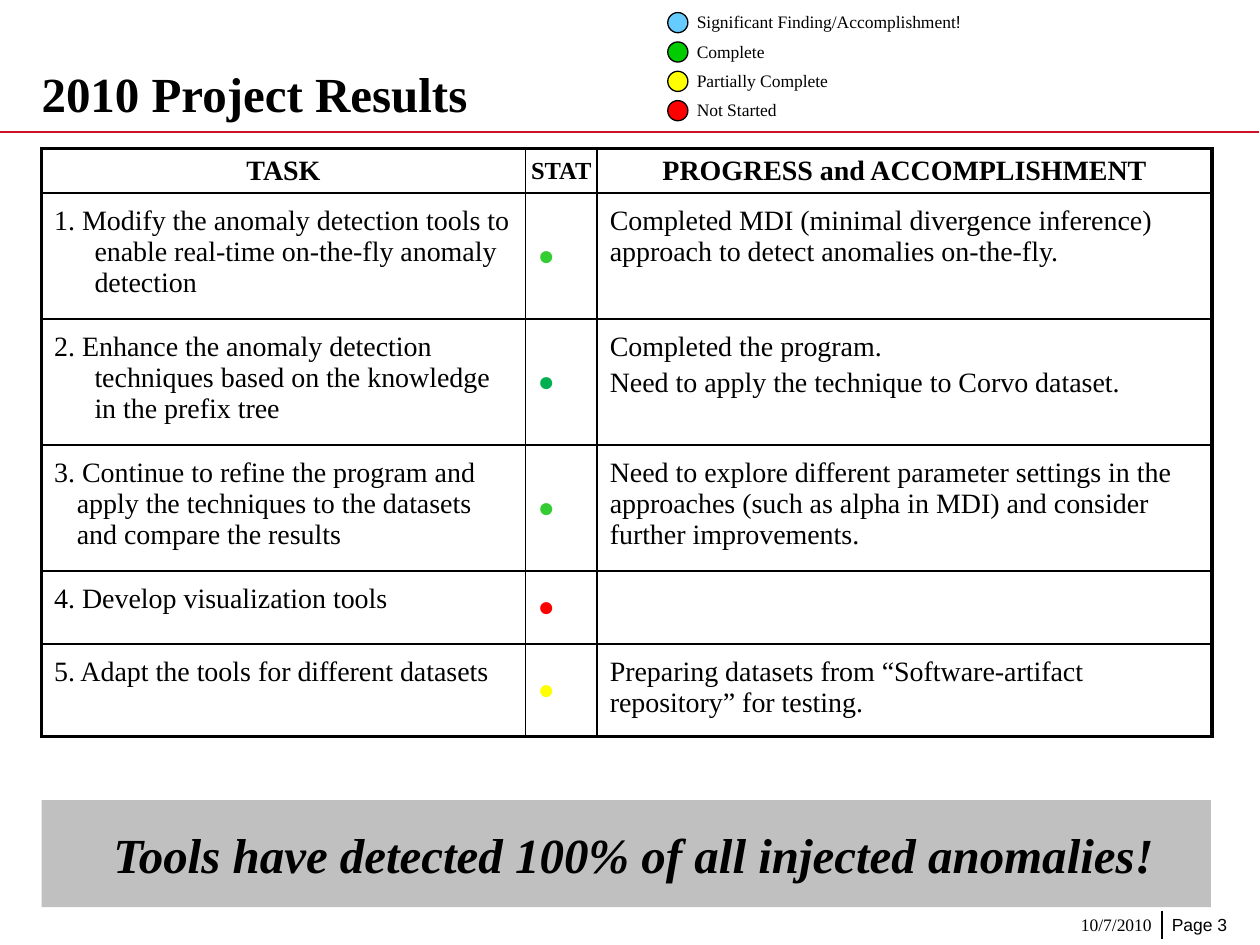
from dataclasses import dataclass

from lxml import etree
from pptx import Presentation
from pptx import util as u
from pptx.dml.color import RGBColor
from pptx.enum import shapes, text
from pptx.oxml.ns import qn


@dataclass(frozen=True)
class Theme:
    serif: str = "Times New Roman"
    sans: str = "Arial"
    black: str = "000000"
    rule: str = "CE1126"
    banner: str = "C0C0C0"
    finding: str = "66CCFF"
    complete: str = "00CC00"
    partial: str = "FFFF00"
    not_started: str = "FF0000"
    light_green: str = "33CC33"
    dark_green: str = "00B050"
    headline: float = 28
    body: float = 16
    status: float = 14
    small: float = 10
    outer_border: float = 2.25
    inner_border: float = 1


@dataclass(frozen=True)
class Box:
    column: float
    row: float
    columns: float
    rows: float


@dataclass(frozen=True)
class Style:
    size: float
    font: str
    color: str = "000000"
    bold: bool = False
    italic: bool = False
    align: text.PP_ALIGN = text.PP_ALIGN.LEFT


@dataclass(frozen=True)
class LegendEntry:
    label: str
    color: str
    sans_ending: str = ""


@dataclass(frozen=True)
class Task:
    name: str
    color: str
    progress: tuple[str, ...]
    rows: float
    hanging: float = 3.2


THEME = Theme()
SLIDE_WIDTH, SLIDE_HEIGHT = u.Inches(10), u.Inches(7.5)
GRID_COLUMNS, GRID_ROWS = 100, 75
LEFT, RIGHT, CENTER = text.PP_ALIGN.LEFT, text.PP_ALIGN.RIGHT, text.PP_ALIGN.CENTER
SMALL = Style(THEME.small, THEME.serif)
BODY = Style(THEME.body, THEME.serif)

LEGEND = (
    LegendEntry("Significant Finding/Accomplishment", THEME.finding, "!"),
    LegendEntry("Complete", THEME.complete),
    LegendEntry("Partially Complete", THEME.partial),
    LegendEntry("Not Started", THEME.not_started),
)
HEADERS = (("TASK", THEME.body), ("STAT", THEME.status),
           ("PROGRESS and ACCOMPLISHMENT", THEME.body))
HEADER_ROWS = 3.5
TABLE_COLUMNS = (38.4, 5.7, 48.8)
TASKS = (
    Task("1. Modify the anomaly detection tools to enable real-time on-the-fly anomaly detection",
         THEME.light_green,
         ("Completed MDI (minimal divergence inference) approach to detect anomalies on-the-fly.",),
         9.4),
    Task("2. Enhance the anomaly detection techniques based on the knowledge in the prefix tree",
         THEME.dark_green,
         ("Completed the program.", "Need to apply the technique to Corvo dataset."), 9.4),
    Task("3. Continue to refine the program and apply the techniques to the datasets "
         "and compare the results", THEME.light_green,
         ("Need to explore different parameter settings in the approaches "
          "(such as alpha in MDI) and consider further improvements.",), 9.4, 1.8),
    Task("4. Develop visualization tools", THEME.not_started, ("",), 5.8),
    Task("5. Adapt the tools for different datasets", THEME.partial,
         ("Preparing datasets from “Software-artifact repository” for testing.",), 7),
)


def across(columns: float) -> int:
    return round(SLIDE_WIDTH * columns / GRID_COLUMNS)


def down(rows: float) -> int:
    return round(SLIDE_HEIGHT * rows / GRID_ROWS)


def place(box: Box) -> tuple[int, int, int, int]:
    return across(box.column), down(box.row), across(box.columns), down(box.rows)


def style_paragraph(paragraph, style: Style) -> None:
    paragraph.alignment = style.align
    font = paragraph.font
    font.size, font.name = u.Pt(style.size), style.font
    font.bold, font.italic = style.bold, style.italic
    font.color.rgb = RGBColor.from_string(style.color)


def add_text(slide, box: Box, words: str, style: Style, wrap: bool = True):
    frame = slide.shapes.add_textbox(*place(box)).text_frame
    frame.word_wrap = wrap
    frame.margin_left = frame.margin_top = frame.margin_right = frame.margin_bottom = 0
    paragraph = frame.paragraphs[0]
    paragraph.text = words
    style_paragraph(paragraph, style)
    return frame


def add_filled(slide, kind: shapes.MSO_SHAPE, box: Box, fill: str, outlined: bool) -> None:
    shape = slide.shapes.add_shape(kind, *place(box))
    shape.shadow.inherit = False
    shape.fill.solid()
    shape.fill.fore_color.rgb = RGBColor.from_string(fill)
    if outlined:
        shape.line.color.rgb = RGBColor.from_string(THEME.black)
        shape.line.width = u.Pt(0.75)
    else:
        shape.line.fill.background()


def add_rule(slide, box: Box, color: str) -> None:
    left, top, width, height = place(box)
    line = slide.shapes.add_connector(shapes.MSO_CONNECTOR.STRAIGHT,
                                      left, top, left + width, top + height)
    line.line.color.rgb = RGBColor.from_string(color)
    line.line.width = u.Pt(1)
    etree.SubElement(line._element.spPr, qn("a:effectLst"))


def add_legend(slide) -> None:
    for index, entry in enumerate(LEGEND):
        step = 2.33 * index
        add_filled(slide, shapes.MSO_SHAPE.OVAL, Box(53, 1 + step, 1.6, 1.6), entry.color, True)
        frame = add_text(slide, Box(55.3, 0.9 + step, 21.2, 1.7), entry.label, SMALL, False)
        if entry.sans_ending:
            run = frame.paragraphs[0].add_run()
            run.text = entry.sans_ending
            run.font.name = THEME.sans


def set_borders(cell, widths: dict[str, float]) -> None:
    properties = cell._tc.get_or_add_tcPr()
    for side, width in widths.items():
        border = etree.SubElement(properties, qn(f"a:ln{side}"), w=str(u.Pt(width)))
        fill = etree.SubElement(border, qn("a:solidFill"))
        etree.SubElement(fill, qn("a:srgbClr"), val=THEME.black)


def fill_cell(cell, lines: tuple[str, ...], style: Style, margins: tuple[float, float],
              middle: bool, hanging: float = 0) -> None:
    cell.margin_left = cell.margin_right = across(margins[0])
    cell.margin_top = cell.margin_bottom = down(margins[1])
    cell.vertical_anchor = text.MSO_ANCHOR.MIDDLE if middle else text.MSO_ANCHOR.TOP
    frame = cell.text_frame
    for index, line in enumerate(lines):
        paragraph = frame.add_paragraph() if index else frame.paragraphs[0]
        paragraph.text = line
        style_paragraph(paragraph, style)
        if index:
            paragraph.space_before = u.Pt(3)
        if hanging:
            properties = paragraph._p.get_or_add_pPr()
            properties.set("marL", str(across(hanging)))
            properties.set("indent", str(-across(hanging)))


def add_task_table(slide) -> None:
    heights = (HEADER_ROWS, *(task.rows for task in TASKS))
    box = Box(3.3, 11.8, sum(TABLE_COLUMNS), sum(heights))
    table = slide.shapes.add_table(len(heights), len(TABLE_COLUMNS), *place(box)).table
    table.first_row = table.horz_banding = False
    for column, width in zip(table.columns, TABLE_COLUMNS):
        column.width = across(width)
    for row, height in zip(table.rows, heights):
        row.height = down(height)
    for index, (label, size) in enumerate(HEADERS):
        fill_cell(table.cell(0, index), (label,),
                  Style(size, THEME.serif, bold=True, align=CENTER), (0, 0), True)
    for index, task in enumerate(TASKS, start=1):
        fill_cell(table.cell(index, 0), (task.name,), BODY, (1, 1), False, task.hanging)
        fill_cell(table.cell(index, 1), ("●",),
                  Style(THEME.body, THEME.sans, task.color), (1, 0), True)
        fill_cell(table.cell(index, 2), task.progress, BODY, (1, 1), False)
    last_row, last_column = len(heights) - 1, len(TABLE_COLUMNS) - 1
    for row in range(len(heights)):
        for column in range(len(TABLE_COLUMNS)):
            outside = {"L": column == 0, "R": column == last_column,
                       "T": row == 0, "B": row == last_row}
            cell = table.cell(row, column)
            set_borders(cell, {side: THEME.outer_border if edge else THEME.inner_border
                               for side, edge in outside.items()})
            cell.fill.background()


def main() -> None:
    presentation = Presentation()
    presentation.slide_width, presentation.slide_height = SLIDE_WIDTH, SLIDE_HEIGHT
    slide = presentation.slides.add_slide(presentation.slide_layouts[6])
    add_rule(slide, Box(0, 10.5, 99.9, 0), THEME.rule)
    add_rule(slide, Box(92.2, 72.3, 0, 2.2), THEME.black)
    add_text(slide, Box(93, 72.5, 7, 1.9), "Page 3", Style(THEME.small, THEME.sans))
    add_text(slide, Box(78.4, 72.5, 13, 1.9), "10/7/2010",
             Style(THEME.small, THEME.serif, align=RIGHT))
    title = add_text(slide, Box(3.3, 1.1, 39.1, 9.1), "2010 Project Results",
                     Style(THEME.headline, THEME.serif, bold=True))
    title.vertical_anchor = text.MSO_ANCHOR.BOTTOM
    title.margin_bottom = down(0.5)
    title.paragraphs[0].line_spacing = 0.85
    add_task_table(slide)
    add_legend(slide)
    add_filled(slide, shapes.MSO_SHAPE.RECTANGLE, Box(3.3, 63.5, 92.8, 8.5), THEME.banner, False)
    add_text(slide, Box(6.3, 65.4, 88, 4.7), "Tools have detected 100% of all injected anomalies!",
             Style(THEME.headline, THEME.serif, bold=True, italic=True, align=CENTER))
    presentation.save("out.pptx")


if __name__ == "__main__":
    main()
